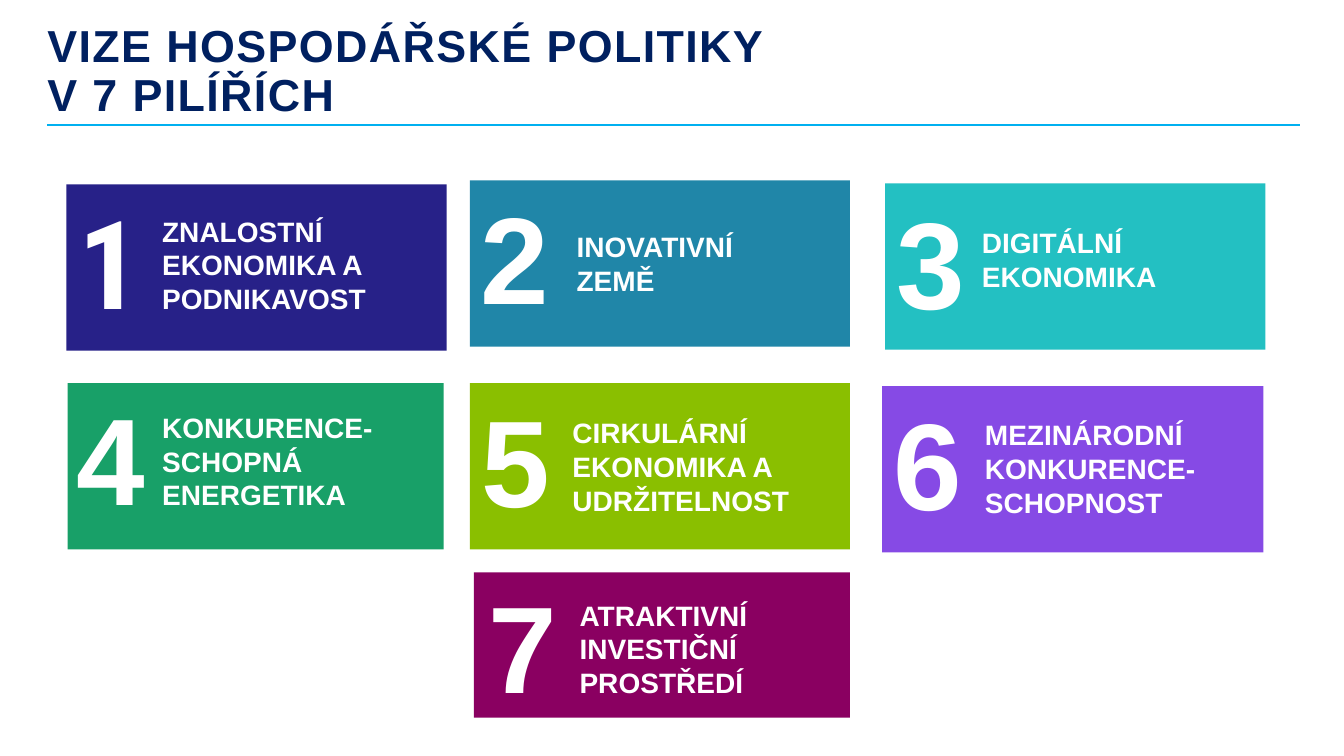
from pptx import Presentation
from pptx.dml.color import RGBColor
from pptx.enum.shapes import MSO_CONNECTOR, MSO_SHAPE
from pptx.enum.text import MSO_ANCHOR, MSO_AUTO_SIZE, PP_ALIGN
from pptx.oxml.ns import qn
from pptx.util import Inches, Pt
from lxml.etree import SubElement

WHITE = RGBColor(0xFF, 0xFF, 0xFF)
NAVY = RGBColor(0x00, 0x20, 0x60)
SKY = RGBColor(0x00, 0xB0, 0xF0)
INDIGO = RGBColor(0x27, 0x21, 0x88)
BLUE = RGBColor(0x20, 0x86, 0xA8)
TURQUOISE = RGBColor(0x23, 0xC0, 0xC2)
GREEN = RGBColor(0x18, 0xA0, 0x68)
LIME = RGBColor(0x8A, 0xBF, 0x00)
VIOLET = RGBColor(0x86, 0x4A, 0xE5)
PLUM = RGBColor(0x8A, 0x00, 0x61)

PILLARS = [
    (INDIGO, (0.66, 1.83, 3.77, 1.65), (0.78, 2.02), (1.51, 2.07, 2.75, 1.11),
     "ZNALOSTNÍ EKONOMIKA A PODNIKAVOST"),
    (BLUE, (4.66, 1.79, 3.77, 1.65), (4.77, 1.98), (5.62, 2.23, 2.05, 0.77),
     "INOVATIVNÍ\nZEMĚ"),
    (TURQUOISE, (8.78, 1.82, 3.77, 1.65), (8.89, 2.02), (9.64, 2.19, 3.08, 0.77),
     "DIGITÁLNÍ\nEKONOMIKA"),
    (GREEN, (0.67, 3.8, 3.73, 1.65), (0.76, 3.97), (1.51, 4.02, 2.82, 1.11),
     "KONKURENCE-\nSCHOPNÁ ENERGETIKA"),
    (LIME, (4.66, 3.8, 3.77, 1.65), (4.78, 3.99), (5.58, 4.07, 2.63, 1.11),
     "CIRKULÁRNÍ EKONOMIKA A UDRŽITELNOST"),
    (VIOLET, (8.75, 3.83, 3.78, 1.65), (8.86, 4.02), (9.67, 4.09, 2.88, 1.11),
     "MEZINÁRODNÍ KONKURENCE-\nSCHOPNOST"),
    (PLUM, (4.7, 5.68, 3.73, 1.44), (4.85, 5.83), (5.65, 5.88, 2.57, 1.11),
     "ATRAKTIVNÍ\vINVESTIČNÍ\vPROSTŘEDÍ"),
]


def add_text(s, box, text, size, color, font="Arial"):
    tf = s.shapes.add_textbox(*map(Inches, box)).text_frame
    tf.word_wrap = True
    tf.vertical_anchor = MSO_ANCHOR.MIDDLE
    tf.text = text
    for p in tf.paragraphs:
        p.alignment = PP_ALIGN.LEFT
        for r in p.runs:
            r.font.name = font
            r.font.size = Pt(size)
            r.font.bold = True
            r.font.color.rgb = color
    return tf


def add_heading(s, box, text, size, color, font="Arial"):
    tf = add_text(s, box, text, size, color, font)
    tf.margin_left = 0
    for p in tf.paragraphs:
        p.line_spacing = 0.9
        for r in p.runs:
            r.font._element.set("spc", "100")


def add_rule(s, x1, x2, y):
    line = s.shapes.add_connector(
        MSO_CONNECTOR.STRAIGHT, Inches(x1), Inches(y), Inches(x2), Inches(y))
    line.line.color.rgb = SKY
    line.line.width = Pt(1)
    SubElement(line._element.spPr, qn("a:effectLst"))


def add_card(s, box, color):
    card = s.shapes.add_shape(MSO_SHAPE.RECTANGLE, *map(Inches, box))
    card.shadow.inherit = False
    card.fill.solid()
    card.fill.fore_color.rgb = color
    card.line.fill.background()


def add_pillar(s, number, color, card, digit, label, text):
    add_card(s, card, color)
    font = "Roboto Condensed" if number == 1 else "Arial"
    add_heading(s, (*digit, 0.73, 1.3), str(number), 88, WHITE, font)
    tf = add_text(s, label, text, 20, WHITE)
    tf.auto_size = MSO_AUTO_SIZE.SHAPE_TO_FIT_TEXT


def main():
    prs = Presentation()
    prs.slide_width = Inches(13.33)
    prs.slide_height = Inches(7.5)
    s = prs.slides.add_slide(prs.slide_layouts[6])
    add_rule(s, 0.47, 12.89, 1.24)
    add_heading(s, (0.47, 0.48, 10.09, 0.48),
                "VIZE HOSPODÁŘSKÉ POLITIKY\vV 7 PILÍŘÍCH", 32, NAVY)
    for number, pillar in enumerate(PILLARS, 1):
        add_pillar(s, number, *pillar)
    prs.save("out.pptx")


if __name__ == "__main__":
    main()
